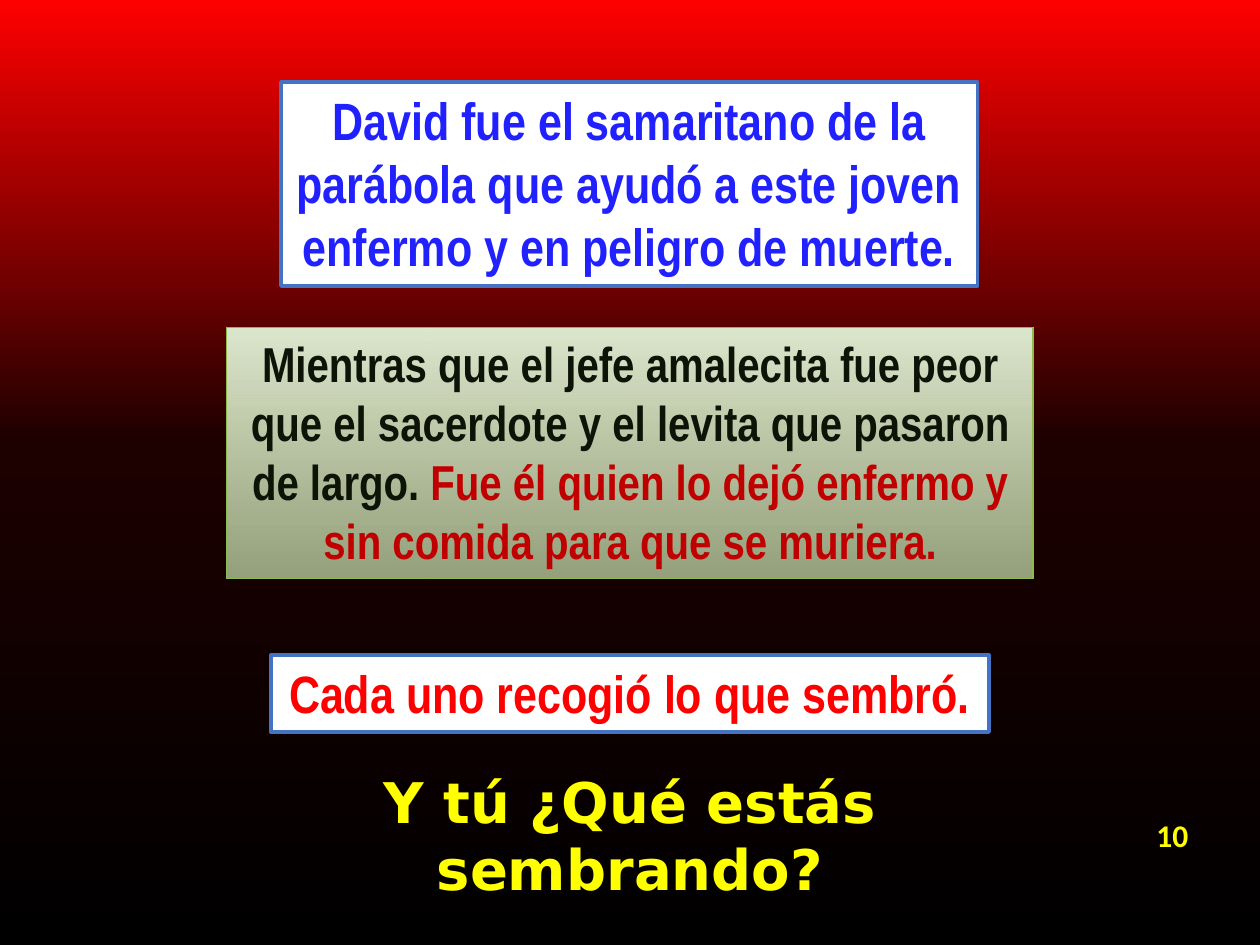
from lxml import etree
from pptx import Presentation
from pptx.dml.color import RGBColor
from pptx.enum.shapes import MSO_SHAPE
from pptx.enum.text import MSO_ANCHOR, MSO_AUTO_SIZE, PP_ALIGN
from pptx.oxml.ns import qn
from pptx.util import Inches, Pt

RED = RGBColor(0xFF, 0x00, 0x00)
EMBER = RGBColor(0x1D, 0x00, 0x00)
BLACK = RGBColor(0x00, 0x00, 0x00)
WHITE = RGBColor(0xFF, 0xFF, 0xFF)
YELLOW = RGBColor(0xFF, 0xFF, 0x00)
BLUE = RGBColor(0x21, 0x21, 0xFF)
NAVY = RGBColor(0x00, 0x20, 0x60)
BORDER_BLUE = RGBColor(0x44, 0x72, 0xC4)
DARK_GREEN = RGBColor(0x0E, 0x13, 0x07)
DARK_RED = RGBColor(0xC0, 0x00, 0x00)
PALE_GREEN = RGBColor(0xDC, 0xE8, 0xCE)
SOFT_GREEN = RGBColor(0xC2, 0xD8, 0xA8)
BORDER_GREEN = RGBColor(0x90, 0xBA, 0x4C)


class SlideBuilder:
    """Holds the text style and the current slide."""

    font = "Arial Narrow"

    def __init__(self, page):
        self.page = page

    def gradient(self, fill, owner, stops):
        """Fill from top to bottom; a stop is (percent, colour, opacity)."""
        fill.gradient()
        fill.gradient_angle = 270
        stop_list = owner.find(".//" + qn("a:gsLst"))
        for old_stop in list(stop_list):
            stop_list.remove(old_stop)
        for percent, color, opacity in stops:
            stop = etree.SubElement(stop_list, qn("a:gs"), pos=str(percent * 1000))
            shade = etree.SubElement(stop, qn("a:srgbClr"), val=str(color))
            if opacity < 100:
                etree.SubElement(shade, qn("a:alpha"), val=str(opacity * 1000))

    def background(self, stops):
        self.gradient(self.page.background.fill, self.page._element, stops)

    def outline(self, span, color, width):
        line = etree.Element(qn("a:ln"), w=str(Pt(width)))
        solid = etree.SubElement(line, qn("a:solidFill"))
        etree.SubElement(solid, qn("a:srgbClr"), val=str(color))
        span.font._element.insert(0, line)

    def add_spans(self, box, spans, size, font=None, align=PP_ALIGN.CENTER, edge=0.25):
        """Fill a box with spans of (text, colour, outline colour)."""
        frame = box.text_frame
        frame.word_wrap = True
        frame.vertical_anchor = MSO_ANCHOR.TOP
        para = frame.paragraphs[0]
        para.alignment = align
        for text, color, edge_color in spans:
            span = para.add_run()
            span.text = text
            span.font.name = font or self.font
            span.font.size = Pt(size)
            span.font.bold = True
            span.font.color.rgb = color
            self.outline(span, edge_color, edge)
        return frame

    def text(self, left, top, width, height, spans, size, **style):
        box = self.page.shapes.add_textbox(
            Inches(left), Inches(top), Inches(width), Inches(height))
        return self.add_spans(box, spans, size, **style)

    def panel(self, left, top, width, height, spans, size,
              border=BORDER_BLUE, weight=2, stops=None):
        box = self.page.shapes.add_shape(
            MSO_SHAPE.RECTANGLE,
            Inches(left), Inches(top), Inches(width), Inches(height))
        box.shadow.inherit = False
        if stops:
            self.gradient(box.fill, box._element, stops)
        else:
            box.fill.solid()
            box.fill.fore_color.rgb = WHITE
        box.line.color.rgb = border
        box.line.width = Pt(weight)
        frame = self.add_spans(box, spans, size)
        frame.auto_size = MSO_AUTO_SIZE.SHAPE_TO_FIT_TEXT


def main():
    deck = Presentation()
    deck.slide_width, deck.slide_height = Inches(10), Inches(7.5)
    builder = SlideBuilder(deck.slides.add_slide(deck.slide_layouts[6]))
    builder.background([(0, RED, 100), (47, EMBER, 100), (100, BLACK, 100)])

    # Slide number
    number = builder.text(9.07, 6.42, 0.46, 0.41, [("10", YELLOW, YELLOW)], 18,
                          font="Calibri", align=PP_ALIGN.RIGHT, edge=0.75)
    number.vertical_anchor = MSO_ANCHOR.MIDDLE
    number.margin_left = 0

    # The Amalekite chief
    builder.panel(1.8, 2.6, 6.4, 1.99, [
        ("Mientras que el jefe amalecita fue peor que el sacerdote y el levita "
         "que pasaron de largo. ", DARK_GREEN, NAVY),
        ("Fue él quien lo dejó enfermo y sin comida para que se muriera.",
         DARK_RED, DARK_RED),
    ], 28, border=BORDER_GREEN, weight=0.75,
        stops=[(0, PALE_GREEN, 100), (100, SOFT_GREEN, 74)])

    # David as the Samaritan
    builder.panel(2.23, 0.65, 5.53, 1.62, [
        ("David fue el samaritano de la parábola que ayudó a este joven enfermo "
         "y en peligro de muerte.", BLUE, BLUE)], 30)

    # Conclusion and closing question
    builder.panel(2.15, 5.2, 5.7, 0.61,
                  [("Cada uno recogió lo que sembró.", RED, RED)], 30)
    question = builder.text(2.5, 6.04, 5, 1.18,
                            [("Y tú ¿Qué estás sembrando?", YELLOW, YELLOW)], 32,
                            font="DejaVu Sans")
    question.auto_size = MSO_AUTO_SIZE.SHAPE_TO_FIT_TEXT

    deck.save("out.pptx")


if __name__ == "__main__":
    main()
